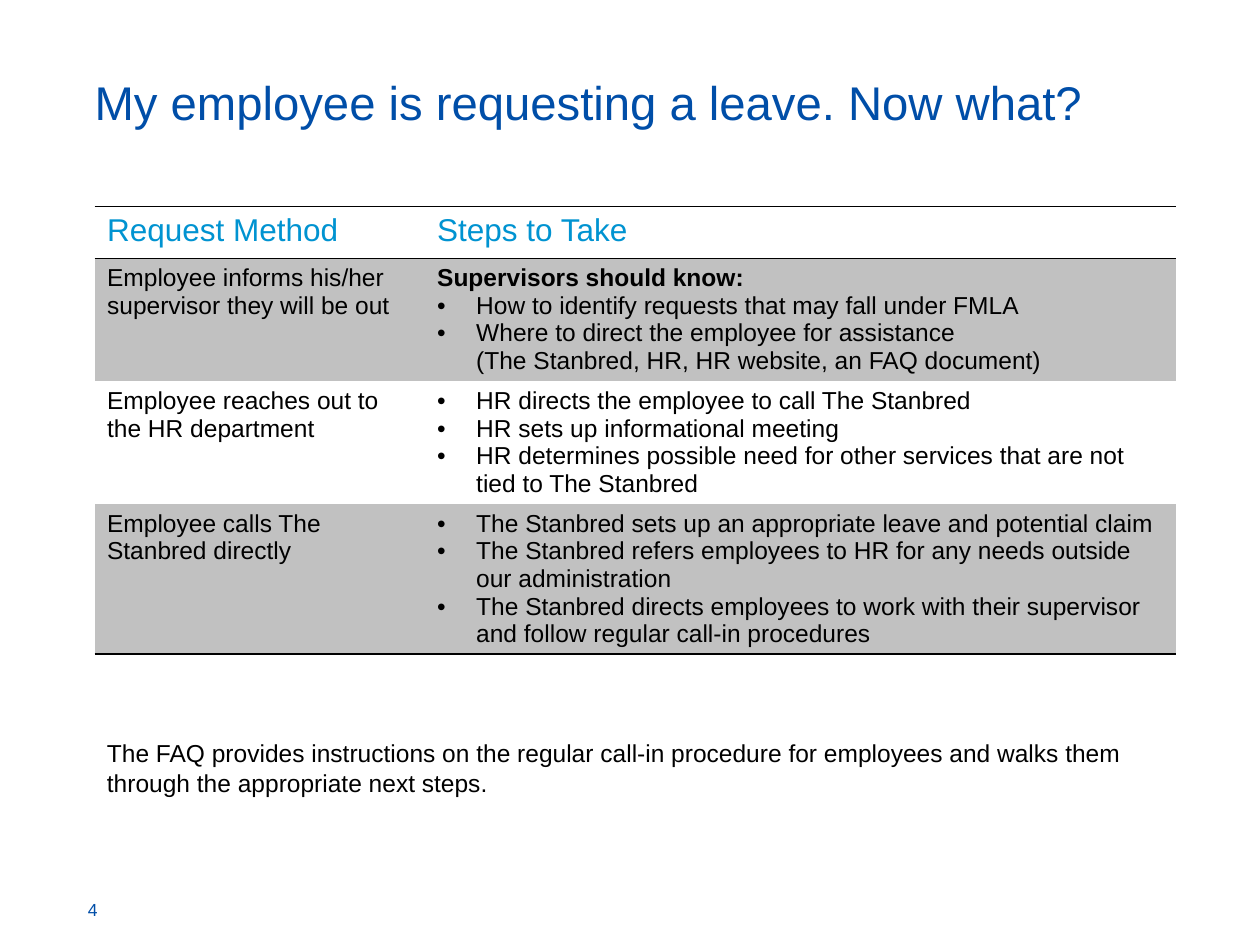
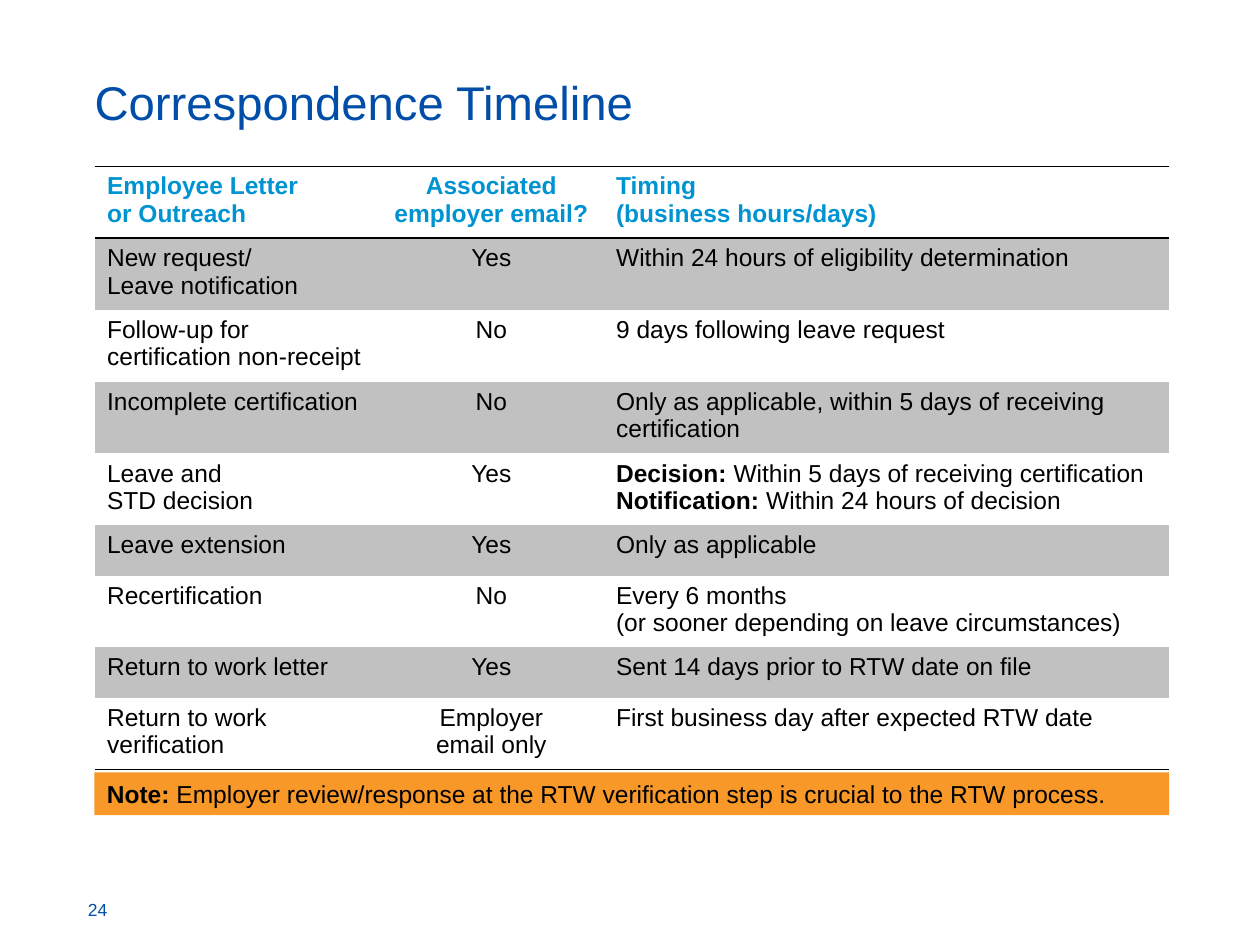
from dataclasses import dataclass

from lxml.etree import SubElement
from pptx import Presentation
from pptx.dml.color import RGBColor
from pptx.enum.shapes import MSO_SHAPE
from pptx.enum.text import MSO_ANCHOR, PP_ALIGN
from pptx.oxml.ns import qn
from pptx.slide import Slide
from pptx.table import Table, _Cell
from pptx.text.text import TextFrame
from pptx.util import Inches, Pt

BLUE = RGBColor(0x00, 0x4E, 0xA8)
SKY = RGBColor(0x00, 0x93, 0xD1)
GREY = RGBColor(0xC1, 0xC1, 0xC1)
ORANGE = RGBColor(0xF8, 0x98, 0x28)
BLACK = RGBColor(0x00, 0x00, 0x00)

FONT = "Arial"
LEFT = 0.75
NO_STYLE = "{2D5ABB26-0587-4C30-8999-92F81FD0307C}"


@dataclass(frozen=True)
class Line:
    text: str = ""
    lead: str = ""
    bullet: bool = False


@dataclass(frozen=True)
class Column:
    heading: str
    width: float
    align: PP_ALIGN = PP_ALIGN.LEFT


@dataclass(frozen=True)
class Row:
    height: float
    cells: tuple[str | tuple[Line, ...], ...]


@dataclass(frozen=True)
class Grid:
    top: float
    columns: tuple[Column, ...]
    rows: tuple[Row, ...]
    heading_height: float
    heading_size: int
    heading_bold: bool


def bullets(*texts: str) -> tuple[Line, ...]:
    return tuple(Line(text, bullet=True) for text in texts)


REQUESTS = Grid(
    top=1.64,
    columns=(Column("Request Method", 2.62), Column("Steps to Take", 5.96)),
    rows=(
        Row(0.97, (
            "Employee informs his/her supervisor they will be out",
            (Line(lead="Supervisors should know:"),) + bullets(
                "How to identify requests that may fall under FMLA",
                "Where to direct the employee for assistance\n"
                "(The Stanbred, HR, HR website, an FAQ document)"),
        )),
        Row(0.97, (
            "Employee reaches out to the HR department",
            bullets(
                "HR directs the employee to call The Stanbred",
                "HR sets up informational meeting",
                "HR determines possible need for other services that are not "
                "tied to The Stanbred"),
        )),
        Row(1.19, (
            "Employee calls The Stanbred directly",
            bullets(
                "The Stanbred sets up an appropriate leave and potential claim",
                "The Stanbred refers employees to HR for any needs outside "
                "our administration",
                "The Stanbred directs employees to work with their supervisor "
                "and follow regular call-in procedures"),
        )),
    ),
    heading_height=0.41,
    heading_size=18,
    heading_bold=False,
)

TALL, SHORT = 0.57, 0.4

TIMELINE = Grid(
    top=1.32,
    columns=(
        Column("Employee Letter\nor Outreach", 2.26),
        Column("Associated\nemployer email?", 1.78, PP_ALIGN.CENTER),
        Column("Timing\n(business hours/days)", 4.49),
    ),
    rows=(
        Row(TALL, ("New request/\nLeave notification", "Yes",
                   "Within 24 hours of eligibility determination")),
        Row(TALL, ("Follow-up for\ncertification non-receipt", "No",
                   "9 days following leave request")),
        Row(TALL, ("Incomplete certification", "No",
                   "Only as applicable, within 5 days of receiving certification")),
        Row(TALL, ("Leave and\nSTD decision", "Yes", (
            Line("Within 5 days of receiving certification", lead="Decision: "),
            Line("Within 24 hours of decision", lead="Notification: ")))),
        Row(SHORT, ("Leave extension", "Yes", "Only as applicable")),
        Row(TALL, ("Recertification", "No",
                   "Every 6 months\n(or sooner depending on leave circumstances)")),
        Row(SHORT, ("Return to work letter", "Yes",
                    "Sent 14 days prior to RTW date on file")),
        Row(TALL, ("Return to work verification", "Employer\nemail only",
                   "First business day after expected RTW date")),
    ),
    heading_height=TALL,
    heading_size=14,
    heading_bold=True,
)


def write_text(frame: TextFrame, text: str, *, lead: str = "", size: int = 14,
               color: RGBColor = BLACK, bold: bool = False, bullet: bool = False,
               align: PP_ALIGN = PP_ALIGN.LEFT) -> None:
    first = frame.paragraphs[0]
    paragraph = frame.add_paragraph() if first.runs else first
    paragraph.alignment = align
    if bullet:
        properties = paragraph._p.get_or_add_pPr()
        properties.set("marL", str(Inches(0.31)))
        properties.set("indent", str(-Inches(0.31)))
        SubElement(properties, qn("a:buFont")).set("typeface", FONT)
        SubElement(properties, qn("a:buChar")).set("char", "•")
    for portion, weight in ((lead, True), (text, bold)):
        if not portion:
            continue
        for index, piece in enumerate(portion.split("\n")):
            if index:
                paragraph.add_line_break()
            run = paragraph.add_run()
            run.text = piece
            run.font.name = FONT
            run.font.size = Pt(size)
            run.font.bold = weight
            run.font.color.rgb = color


def add_text_box(slide: Slide, left: float, top: float, width: float,
                 height: float) -> TextFrame:
    frame = slide.shapes.add_textbox(
        Inches(left), Inches(top), Inches(width), Inches(height)).text_frame
    frame.word_wrap = True
    return frame


def add_rule(cell: _Cell, side: str) -> None:
    rule = SubElement(cell._tc.get_or_add_tcPr(), qn(f"a:{side}"), w=str(Pt(1)))
    fill = SubElement(rule, qn("a:solidFill"))
    SubElement(fill, qn("a:srgbClr")).set("val", str(BLACK))


def fill_row(table: Table, index: int, row: Row, grid: Grid) -> None:
    table.rows[index].height = Inches(row.height)
    is_heading = index == 0
    for column_index, (column, content) in enumerate(zip(grid.columns, row.cells)):
        cell = table.cell(index, column_index)
        if is_heading:
            add_rule(cell, "lnT")
        if index in (0, len(grid.rows)):
            add_rule(cell, "lnB")
        if index % 2:
            cell.fill.solid()
            cell.fill.fore_color.rgb = GREY
        else:
            cell.fill.background()
        lines = (Line(content),) if isinstance(content, str) else content
        for line in lines:
            write_text(
                cell.text_frame, line.text, lead=line.lead, bullet=line.bullet,
                align=column.align,
                size=grid.heading_size if is_heading else 14,
                color=SKY if is_heading else BLACK,
                bold=is_heading and grid.heading_bold)


def add_grid(slide: Slide, grid: Grid) -> None:
    heading = Row(grid.heading_height, tuple(c.heading for c in grid.columns))
    rows = (heading,) + grid.rows
    table = slide.shapes.add_table(
        len(rows), len(grid.columns), Inches(LEFT), Inches(grid.top),
        Inches(sum(c.width for c in grid.columns)),
        Inches(sum(r.height for r in rows))).table
    table.first_row = False
    table.horz_banding = False
    table._tbl.tblPr.find(qn("a:tableStyleId")).text = NO_STYLE
    for index, column in enumerate(grid.columns):
        table.columns[index].width = Inches(column.width)
    for index, row in enumerate(rows):
        fill_row(table, index, row, grid)


def add_page(deck: Presentation, title: str, number: int, grid: Grid) -> Slide:
    slide = deck.slides.add_slide(deck.slide_layouts[6])
    add_grid(slide, grid)

    page_number = add_text_box(slide, 0.6, 6.97, 0.5, 0.38)
    page_number.vertical_anchor = MSO_ANCHOR.BOTTOM
    write_text(page_number, str(number), size=10, color=BLUE)

    heading = add_text_box(slide, LEFT, 0.55, 8.75, 0.5)
    heading.margin_left = heading.margin_right = 0
    heading.margin_top = heading.margin_bottom = Inches(0.03)
    write_text(heading, title, size=27, color=BLUE)
    return slide


def add_note_bar(slide: Slide, lead: str, text: str) -> None:
    bar = slide.shapes.add_shape(
        MSO_SHAPE.RECTANGLE, Inches(LEFT), Inches(6.13), Inches(8.53), Inches(0.34))
    bar.shadow.inherit = False
    bar.fill.solid()
    bar.fill.fore_color.rgb = ORANGE
    bar.line.fill.background()
    bar.text_frame.word_wrap = True
    bar.text_frame.vertical_anchor = MSO_ANCHOR.TOP
    write_text(bar.text_frame, text, lead=lead)


def main() -> None:
    deck = Presentation()
    deck.slide_width = Inches(10)
    deck.slide_height = Inches(7.5)

    requests = add_page(
        deck, "My employee is requesting a leave. Now what?", 4, REQUESTS)
    write_text(
        add_text_box(requests, LEFT, 5.81, 8.58, 0.57),
        "The FAQ provides instructions on the regular call-in procedure for "
        "employees and walks them through the appropriate next steps.")

    timeline = add_page(deck, "Correspondence Timeline", 24, TIMELINE)
    add_note_bar(
        timeline, "Note: ",
        "Employer review/response at the RTW verification step is crucial to "
        "the RTW process.")

    deck.save("out.pptx")


if __name__ == "__main__":
    main()
